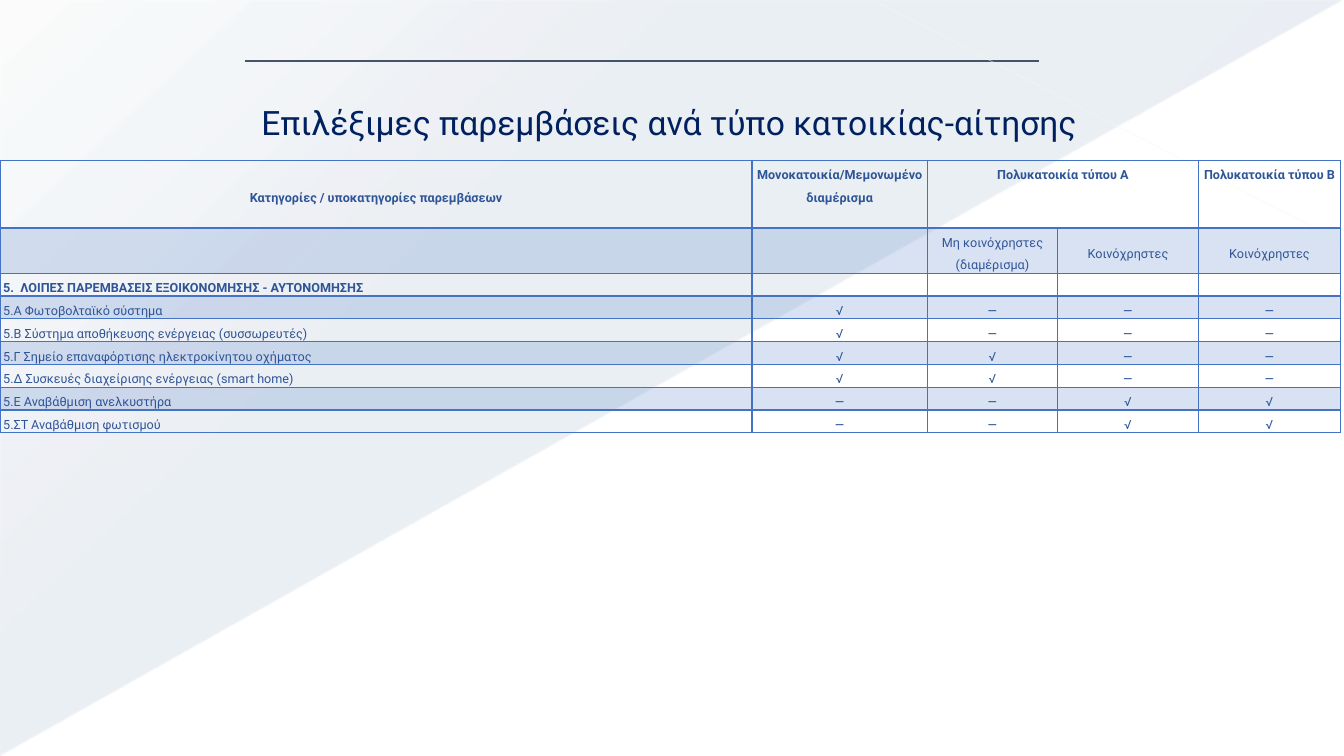
from lxml import etree
from pptx import Presentation
from pptx.dml import color
from pptx.enum import shapes, text
from pptx.oxml import ns
from pptx.util import Cm, Pt

FONT = "Roboto"
BLUE = "4472C4"
TABLE_TEXT = "2F5597"
YES, NO = "√", "─"
CENTER = text.PP_ALIGN.CENTER
LEFT = text.PP_ALIGN.LEFT
TOP = text.MSO_ANCHOR.TOP
MIDDLE = text.MSO_ANCHOR.MIDDLE

COLUMNS = [18.95, 4.42, 3.28, 3.55, 3.58]
ROWS = [1.69, 1.09] + [0.55] * 7
CELLS = [
    ["Κατηγορίες / υποκατηγορίες παρεμβάσεων", "Μονοκατοικία/Μεμονωμένο διαμέρισμα",
     "Πολυκατοικία τύπου Α", "", "Πολυκατοικία τύπου Β"],
    ["", "", "Μη κοινόχρηστες (διαμέρισμα)", "Κοινόχρηστες", "Κοινόχρηστες"],
    ["5.  ΛΟΙΠΕΣ ΠΑΡΕΜΒΑΣΕΙΣ ΕΞΟΙΚΟΝΟΜΗΣΗΣ - ΑΥΤΟΝΟΜΗΣΗΣ", "", "", "", ""],
    ["5.A Φωτοβολταϊκό σύστημα", YES, NO, NO, NO],
    ["5.Β Σύστημα αποθήκευσης ενέργειας (συσσωρευτές)", YES, NO, NO, NO],
    ["5.Γ Σημείο επαναφόρτισης ηλεκτροκίνητου οχήματος", YES, YES, NO, NO],
    ["5.Δ Συσκευές διαχείρισης ενέργειας (smart home)", YES, YES, NO, NO],
    ["5.Ε Αναβάθμιση ανελκυστήρα", NO, NO, YES, YES],
    ["5.ΣΤ Αναβάθμιση φωτισμού", NO, NO, YES, YES],
]


def rgb(value):
    return color.RGBColor.from_string(value)


def add_node(parent, tag, **attrs):
    node = etree.SubElement(parent, ns.qn(tag))
    for name, value in attrs.items():
        node.set(name, str(value))
    return node


def add_alpha(fill_parent, percent):
    for clr in fill_parent.iter(ns.qn("a:srgbClr")):
        add_node(clr, "a:alpha", val=percent * 1000)


def style_paragraph(p, size, hex_color, bold, align, spacing):
    p.alignment = align
    p.line_spacing = spacing
    for r in p.runs:
        r.font.size = Pt(size)
        r.font.name = FONT
        r.font.bold = bold
        r.font.color.rgb = rgb(hex_color)
    if not p.runs:
        add_node(p._p, "a:endParaRPr", sz=size * 100)


def add_title(s, content):
    tf = s.shapes.add_textbox(Cm(2.26), Cm(2.41), Cm(29.21), Cm(1.47)).text_frame
    tf.word_wrap = True
    tf.vertical_anchor = MIDDLE
    tf.text = content
    style_paragraph(tf.paragraphs[0], 24, "002060", False, CENTER, 0.9)


def add_line(s, ends, hex_color, width, alpha=100):
    line = s.shapes.add_connector(shapes.MSO_CONNECTOR.STRAIGHT, *map(Cm, ends))
    line.line.color.rgb = rgb(hex_color)
    line.line.width = Pt(width)
    spPr = line._element.spPr
    if alpha < 100:
        add_alpha(spPr, alpha)
    add_node(spPr, "a:effectLst")


def add_backdrop(s):
    sp = s.shapes.add_shape(shapes.MSO_SHAPE.RIGHT_TRIANGLE,
                            Cm(0.02), Cm(0.02), Cm(33.82), Cm(19.01))
    sp.shadow.inherit = False
    sp.line.fill.background()
    sp.rotation = 180
    spPr = sp._element.spPr
    spPr.xfrm.set("flipH", "1")
    grad = etree.Element(ns.qn("a:gradFill"), rotWithShape="1")
    stops = add_node(grad, "a:gsLst")
    for position, alpha in [(0, 10), (70, 8), (100, 1)]:
        stop = add_node(stops, "a:gs", pos=position * 1000)
        add_node(stop, "a:srgbClr", val="1F497D")
        add_alpha(stop, alpha)
    add_node(grad, "a:lin", ang=133 * 60000, scaled=0)
    spPr.find(ns.qn("a:prstGeom")).addnext(grad)


def add_borders(cell, top, bottom):
    tcPr = cell._tc.get_or_add_tcPr()
    for side, width in [("L", 1), ("R", 1), ("T", top), ("B", bottom)]:
        ln = add_node(tcPr, f"a:ln{side}", w=Pt(width))
        add_node(add_node(ln, "a:solidFill"), "a:srgbClr", val=BLUE)


def style_cell(cell, row, col, content):
    cell.margin_left = cell.margin_right = Cm(0.08)
    cell.margin_top = cell.margin_bottom = 0
    cell.vertical_anchor = TOP if row == 0 and col > 0 else MIDDLE
    cell.text = content
    align = LEFT if row > 1 and col == 0 else CENTER
    style_paragraph(cell.text_frame.paragraphs[0], 9, TABLE_TEXT,
                    row in (0, 2), align, 1.5)
    add_borders(cell, 2 if row == 1 else 1, 2 if row == 0 else 1)
    if row % 2:
        cell.fill.solid()
        cell.fill.fore_color.rgb = rgb(BLUE)
        add_alpha(cell._tc.tcPr.find(ns.qn("a:solidFill")), 20)
    else:
        cell.fill.background()


def add_interventions_table(s):
    frame = s.shapes.add_table(len(ROWS), len(COLUMNS), 0, Cm(4.05),
                               Cm(sum(COLUMNS)), Cm(sum(ROWS)))
    table = frame.table
    for column, width in zip(table.columns, COLUMNS):
        column.width = Cm(width)
    for row, height in zip(table.rows, ROWS):
        row.height = Cm(height)
    for i, contents in enumerate(CELLS):
        for j, content in enumerate(contents):
            style_cell(table.cell(i, j), i, j, content)
    table.cell(0, 2).merge(table.cell(0, 3))


def main():
    prs = Presentation()
    prs.slide_width, prs.slide_height = Cm(33.87), Cm(19.05)
    s = prs.slides.add_slide(prs.slide_layouts[6])
    add_backdrop(s)
    add_line(s, (6.17, 1.54, 26.19, 1.54), "44546A", 1)
    add_line(s, (33.83, 6.1, 22.05, 0.03), "FAF8EE", 0.75, 45)
    add_title(s, "Επιλέξιμες παρεμβάσεις ανά τύπο κατοικίας-αίτησης")
    add_interventions_table(s)
    prs.save("out.pptx")


if __name__ == "__main__":
    main()
